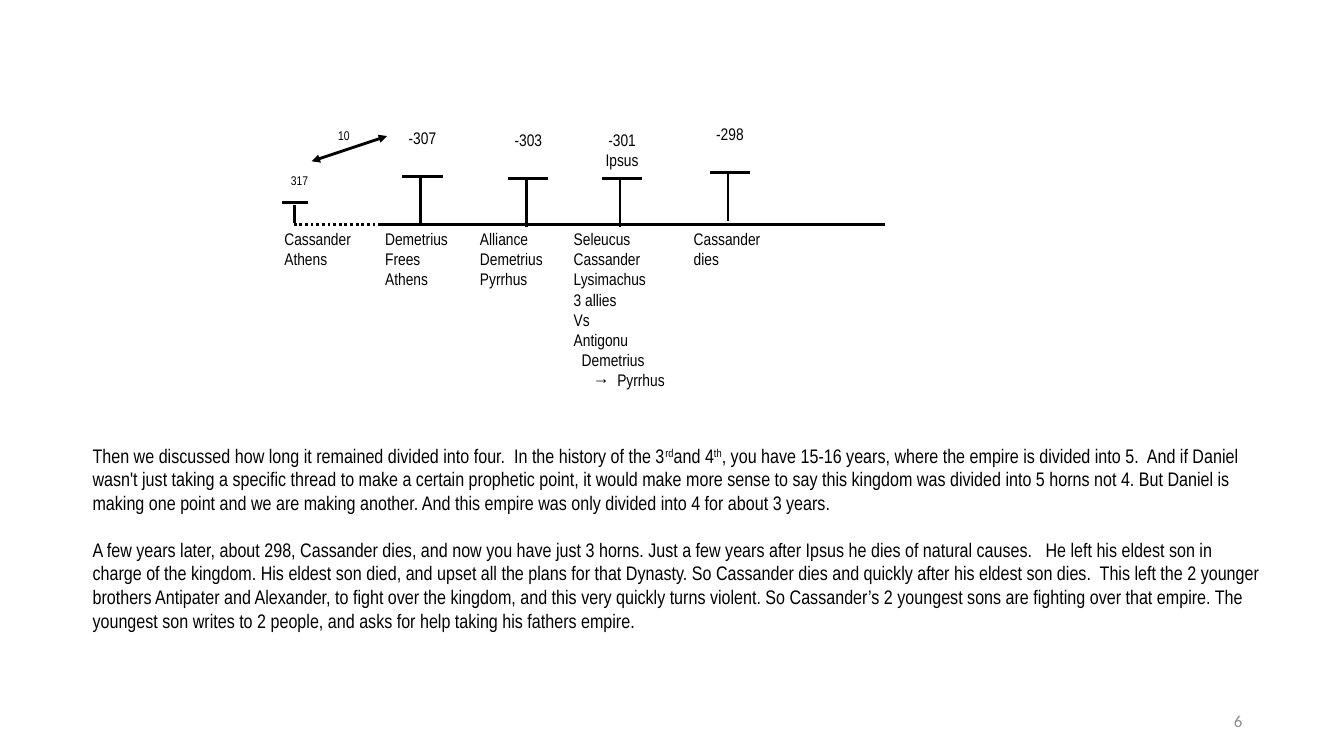
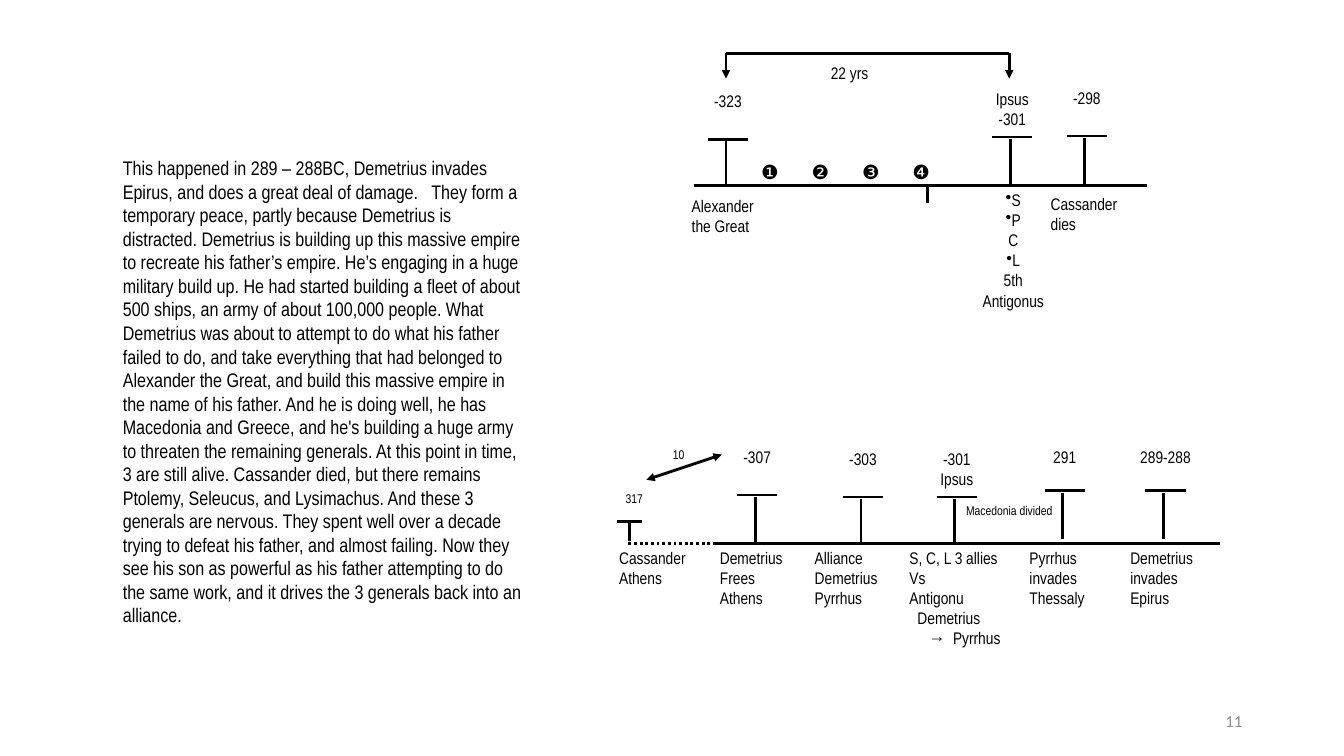
from dataclasses import dataclass

from lxml.etree import SubElement
from pptx import Presentation
from pptx.dml.color import RGBColor
from pptx.enum.dml import MSO_LINE
from pptx.enum.shapes import MSO_CONNECTOR
from pptx.enum.text import MSO_ANCHOR, PP_ALIGN
from pptx.oxml.ns import qn
from pptx.util import Inches, Pt


@dataclass(frozen=True)
class Style:
    font: str
    size: int
    color: RGBColor


@dataclass(frozen=True)
class Theme:
    ink = RGBColor(0, 0, 0)
    grey = RGBColor(0x8C, 0x8C, 0x8C)
    rule = Pt(2)
    body = Style("Arial Narrow", 14, ink)
    label = Style("Arial Narrow", 12, ink)
    small = Style("Arial Narrow", 9, ink)
    marker = Style("Arial", 14, ink)
    footer = Style("Calibri", 12, grey)


@dataclass(frozen=True)
class Line:
    runs: tuple
    indent: float = 0
    bullet: bool = False
    space: int = 0
    tabs: tuple = ()


@dataclass(frozen=True)
class Event:
    x: float
    drop: float
    dates: tuple
    caption: tuple
    caption_x: float
    caption_y: float = 0
    caption_width: float = 0.81
    caption_align: PP_ALIGN = PP_ALIGN.LEFT
    lift: float = 1


theme = Theme()
deck = Presentation()
deck.slide_width, deck.slide_height = Inches(13.33), Inches(7.5)
COLUMN = deck.slide_width / 13.33
ROW = deck.slide_height / 7.5


def write(page, left, top, width, height, lines, style,
          align=PP_ALIGN.LEFT, inset=0.04, anchor=MSO_ANCHOR.TOP):
    box = page.shapes.add_textbox(int(left * COLUMN), int(top * ROW),
                                  int(width * COLUMN), int(height * ROW))
    frame = box.text_frame
    frame.word_wrap = True
    frame.vertical_anchor = anchor
    frame.margin_top = frame.margin_bottom = int(min(inset, 0.05) * ROW)
    frame.margin_left = frame.margin_right = int(inset * COLUMN)
    for number, line in enumerate(lines):
        if isinstance(line, str):
            line = Line(((line, 0),))
        para = frame.add_paragraph() if number else frame.paragraphs[0]
        para.alignment = align
        para.space_before = Pt(line.space)
        settings = para._p.get_or_add_pPr()
        settings.set("marL", str(int(line.indent * COLUMN)))
        settings.set("indent", "0")
        if line.bullet:
            SubElement(settings, qn("a:buChar")).set("char", "•")
        if line.tabs:
            stops = SubElement(settings, qn("a:tabLst"))
            for stop in line.tabs:
                SubElement(stops, qn("a:tab"), pos=str(int(stop * COLUMN)), algn="l")
        for words, raised in line.runs:
            span = para.add_run()
            span.text = words
            span.font.name = style.font
            span.font.size = Pt(style.size)
            span.font.color.rgb = style.color
            if raised:
                span._r.get_or_add_rPr().set("baseline", str(raised * 1000))


def rule(page, x1, y1, x2, y2, dash=None, ends=()):
    line = page.shapes.add_connector(MSO_CONNECTOR.STRAIGHT, int(x1 * COLUMN), int(y1 * ROW),
                                     int(x2 * COLUMN), int(y2 * ROW))
    line.line.color.rgb = theme.ink
    line.line.width = theme.rule
    if dash:
        line.line.dash_style = dash
    for end in ends:
        SubElement(line.line._get_or_add_ln(), qn(f"a:{end}"), type="triangle")
    SubElement(line._element.spPr, qn("a:effectLst"))


blank = deck.slide_layouts[6]
division = deck.slides.add_slide(blank)
alliance = deck.slides.add_slide(blank)

for page, number in ((division, "6"), (alliance, "11")):
    write(page, 9.42, 6.95, 3, 0.4, [number], theme.footer,
          PP_ALIGN.RIGHT, 0.1, MSO_ANCHOR.MIDDLE)

write(division, 0.82, 4.35, 11.8, 2.05, [
    Line((
        ("Then we discussed how long it remained divided into four.  In the history of the 3", 0),
        ("rd", 30),
        ("and 4", 0),
        ("th", 30),
        (", you have 15-16 years, where the empire is divided into 5.  And if Daniel wasn't just "
         "taking a specific thread to make a certain prophetic point, it would make more sense to "
         "say this kingdom was divided into 5 horns not 4. But Daniel is making one point and we "
         "are making another. And this empire was only divided into 4 for about 3 years.", 0),
    )),
    Line(((
        "A few years later, about 298, Cassander dies, and now you have just 3 horns. Just a few "
        "years after Ipsus he dies of natural causes.   He left his eldest son in charge of the "
        "kingdom. His eldest son died, and upset all the plans for that Dynasty. So Cassander "
        "dies and quickly after his eldest son dies.  This left the 2 younger brothers Antipater "
        "and Alexander, to fight over the kingdom, and this very quickly turns violent. So "
        "Cassander’s 2 youngest sons are fighting over that empire. The youngest son writes to 2 "
        "people, and asks for help taking his fathers empire.", 0),), space=17),
], theme.body, inset=0.1)

write(alliance, 1.12, 1.5, 4.17, 4.98, [Line((
    ("This happened in 289 – 288BC, Demetrius invades Epirus, and does a great deal of damage.   "
     "They form a temporary peace, partly because Demetrius is distracted. Demetrius is building "
     "up this massive empire to recreate his father’s empire. He’s engaging in a huge military "
     "build up. He had started building a fleet of about 500 ships, an army of about 100,000 "
     "people. ", 0),
    ("What Demetrius was about to attempt to do what his father failed to do, and take "
     "everything that had belonged to Alexander the Great, and build this massive empire in the "
     "name of his father. And he is doing well, he has Macedonia and Greece, and he's building a "
     "huge army to threaten the remaining generals. ", 0),
    ("At this point in time, 3 are still alive. Cassander died, but there remains Ptolemy, "
     "Seleucus, and Lysimachus. And these 3 generals are nervous. They spent well over a decade "
     "trying to defeat his father, and almost failing. Now they see his son as powerful as his "
     "father attempting to do the same work, and it drives the 3 generals back into an "
     "alliance.", 0),
))], theme.body, inset=0.1)

opening = [
    Event(0.39, 0, ("-307",), ("Demetrius", "Frees", "Athens"), 0),
    Event(1.44, 0.02, ("-303",), ("Alliance", "Demetrius", "Pyrrhus"), 0.94),
]
opponents = ("Vs", "Antigonu", Line((("Demetrius", 0),), 0.08),
             Line((("→  Pyrrhus", 0),), 0.19))
ipsus_allies = ("Seleucus", "Cassander", "Lysimachus", "3 allies")
generals = (
    Line((("S", 0),), bullet=True),
    Line((("P", 0),), bullet=True),
    "C",
    Line((("L", 0),), bullet=True),
    "5th",
    "Antigonus",
)

division_events = opening + [
    Event(2.37, 0.02, ("-301", "Ipsus"), ipsus_allies + opponents, 1.87, caption_width=1.06),
    Event(3.44, -0.04, ("-298",), ("Cassander dies",), 3.06),
]
alliance_events = opening + [
    Event(2.37, 0.02, ("-301", "Ipsus"), ("S, C, L 3 allies",) + opponents, 1.88,
          caption_width=1.06),
    Event(3.44, -0.04, ("291",), ("Pyrrhus invades Thessaly",), 3.07, lift=0.96),
    Event(4.44, -0.04, ("289-288",), ("Demetrius invades Epirus",), 4.07, lift=0.96),
]
succession_events = [
    Event(0.32, 0.02, ("-323",), ("Alexander the Great",), -0.06, 0.06),
    Event(3.14, 0, ("Ipsus", "-301"), generals, 2.82, caption_width=0.7,
          caption_align=PP_ALIGN.CENTER),
    Event(3.88, -0.01, ("-298",), ("Cassander dies",), 3.5, 0.04),
]

timelines = [
    (division, 3.78, 2.23, 5, True, division_events),
    (alliance, 6.88, 1.84, 4.5, False, succession_events),
    (alliance, 7.1, 5.39, 5, True, alliance_events),
]

for page, left, axis, length, has_prelude, events in timelines:
    rule(page, left, axis, left + length, axis)
    for event in events:
        x, foot = left + event.x, axis + event.drop
        rule(page, x, foot - 0.46, x, foot)
        rule(page, x - 0.18, foot - 0.48, x + 0.22, foot - 0.48)
        write(page, x - 0.33, foot - event.lift, 0.7, 0.56, event.dates,
              theme.label, PP_ALIGN.CENTER)
        write(page, left + event.caption_x, axis + event.caption_y, event.caption_width,
              0.1 + 0.2 * len(event.caption), event.caption, theme.label, event.caption_align)
    if has_prelude:
        rule(page, left, axis, left - 0.88, axis, MSO_LINE.ROUND_DOT)
        rule(page, left - 0.86, axis - 0.2, left - 0.86, axis - 0.02)
        rule(page, left - 0.98, axis - 0.22, left - 0.73, axis - 0.22)
        rule(page, left - 0.69, axis - 0.63, left + 0.06, axis - 0.88,
             ends=("headEnd", "tailEnd"))
        for words, x, rise in (("317", 1, 0.56), ("10", 0.56, 1)):
            write(page, left - x, axis - rise, 0.38, 0.39, [words], theme.small, PP_ALIGN.CENTER)
        write(page, left - 1, axis, 0.81, 0.75, ["Cassander", "Athens"], theme.label)

span_left, span_right, span_top = 7.2, 10.01, 0.53
rule(alliance, span_left, span_top, span_right, span_top)
for x in (span_left, span_right):
    rule(alliance, x, span_top, x, span_top + 0.25, ends=("tailEnd",))
write(alliance, 8.2, 0.58, 0.5, 0.28, ["22 yrs"], theme.label)
rule(alliance, 9.2, 1.83, 9.2, 2.01)
write(alliance, 7.51, 1.55, 2.29, 0.25,
      [Line((("❶\t❷\t❸\t❹", 0),), tabs=(0.28, 1.06, 1.4))], theme.marker)
write(alliance, 9.53, 4.95, 0.96, 0.39, ["Macedonia divided"], theme.small, PP_ALIGN.CENTER)

deck.save("out.pptx")
